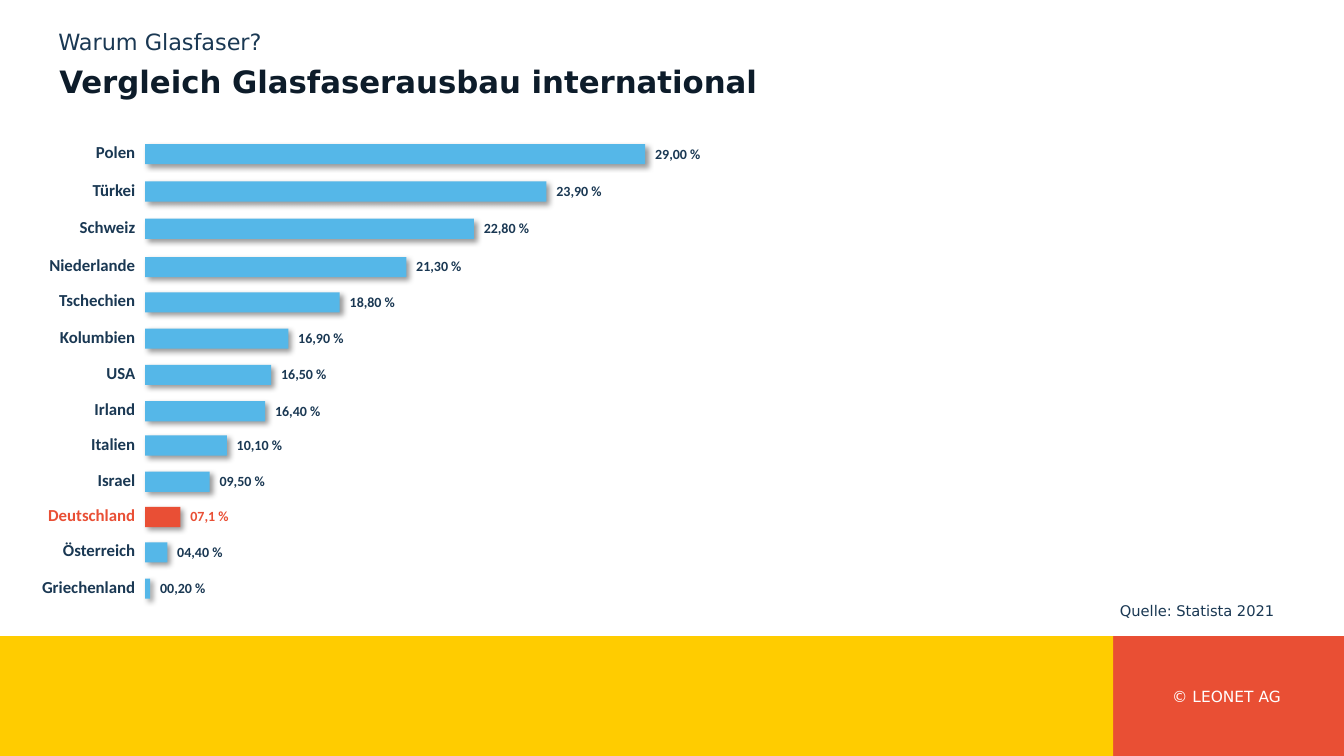
from lxml.etree import SubElement
from pptx import Presentation
from pptx.dml.color import RGBColor
from pptx.enum.shapes import MSO_SHAPE
from pptx.enum.text import MSO_ANCHOR, PP_ALIGN
from pptx.oxml.ns import qn
from pptx.util import Inches, Pt

NAVY, BLUE, RED = "1A3853", "55B7E8", "E94F35"

deck = Presentation()
deck.slide_width, deck.slide_height = Inches(13.33), Inches(7.5)
slide = deck.slides.add_slide(deck.slide_layouts[6])


def add_block(left, top, width, height, color):
    block = slide.shapes.add_shape(
        MSO_SHAPE.RECTANGLE, Inches(left), Inches(top), Inches(width), Inches(height))
    block.shadow.inherit = False
    block.fill.solid()
    block.fill.fore_color.rgb = RGBColor.from_string(color)
    block.line.fill.background()
    return block


def add_text(text, left, top, width, height, size, color=NAVY, font="DejaVu Sans",
             bold=False, align=PP_ALIGN.LEFT, anchor=MSO_ANCHOR.TOP, spacing=1.0, wrap=True):
    frame = slide.shapes.add_textbox(
        Inches(left), Inches(top), Inches(width), Inches(height)).text_frame
    frame.word_wrap = wrap
    frame.vertical_anchor = anchor
    paragraph = frame.paragraphs[0]
    paragraph.alignment = align
    paragraph.line_spacing = spacing
    run = paragraph.add_run()
    run.text = text
    run.font.name, run.font.size, run.font.bold = font, Pt(size), bold
    run.font.color.rgb = RGBColor.from_string(color)


add_block(11.04, 6.31, 2.29, 1.19, "E94F34")
add_block(0, 6.31, 11.04, 1.19, "FFCC00")
add_text("© LEONET AG", 11.51, 6.77, 1.31, 0.29, 11, color="FFFFFF", align=PP_ALIGN.CENTER)
add_text("Quelle: Statista 2021", 11.01, 5.94, 2.18, 0.21, 10.5, spacing=0.9)
add_text("Vergleich Glasfaserausbau international", 0.49, 0.57, 11.5, 0.51, 22,
         color="0D1C2A", bold=True, anchor=MSO_ANCHOR.MIDDLE, spacing=0.9)
add_text("Warum Glasfaser?", 0.48, 0.23, 9.98, 0.47, 16)

axis_left = 1.44
countries = [
    ("Polen", "29,00 %", 1.43, 4.96),
    ("Türkei", "23,90 %", 1.8, 3.98),
    ("Schweiz", "22,80 %", 2.17, 3.26),
    ("Niederlande", "21,30 %", 2.55, 2.59),
    ("Tschechien", "18,80 %", 2.9, 1.93),
    ("Kolumbien", "16,90 %", 3.26, 1.42),
    ("USA", "16,50 %", 3.62, 1.25),
    ("Irland", "16,40 %", 3.98, 1.19),
    ("Italien", "10,10 %", 4.32, 0.81),
    ("Israel", "09,50 %", 4.68, 0.64),
    ("Deutschland", "07,1 %", 5.03, 0.35),
    ("Österreich", "04,40 %", 5.38, 0.22),
    ("Griechenland", "00,20 %", 5.74, 0.05),
]
for country, share, top, length in countries:
    highlighted = country == "Deutschland"
    text_color = RED if highlighted else NAVY
    bar = add_block(axis_left, top, length, 0.2, RED if highlighted else BLUE)
    effects = bar._element.spPr.find(qn("a:effectLst"))
    shadow = SubElement(effects, qn("a:outerShdw"), blurRad=str(Pt(4)), dist=str(Pt(3)),
                        dir="2700000", algn="tl", rotWithShape="0")
    shade = SubElement(shadow, qn("a:srgbClr"), val="000000")
    SubElement(shade, qn("a:alpha"), val="40000")
    add_text(country, 0.2, top - 0.07, axis_left - 0.2, 0.3, 12, color=text_color,
             font="Calibri", bold=True, align=PP_ALIGN.RIGHT)
    add_text(share, axis_left + length, top - 0.04, 0.66, 0.27, 10, color=text_color,
             font="Calibri", bold=True, wrap=False)

deck.save("out.pptx")
